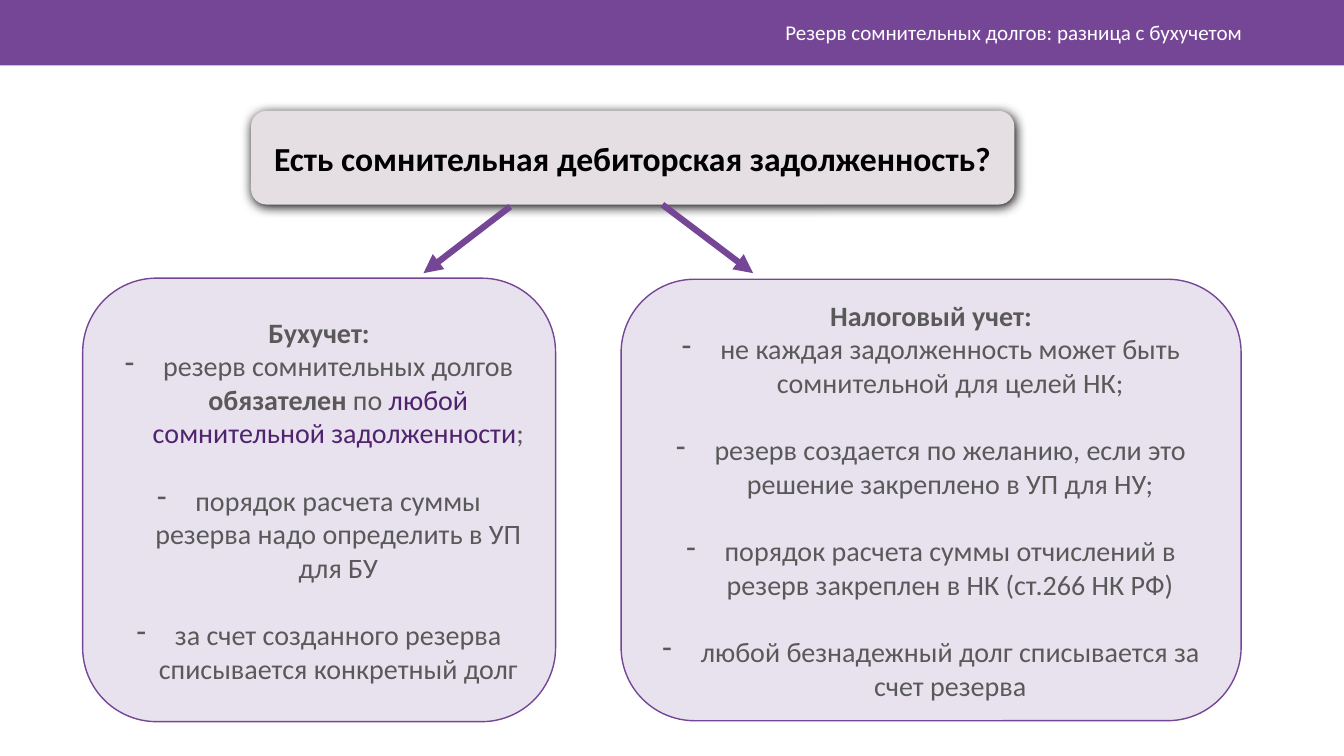
from dataclasses import dataclass

from lxml import etree
from pptx import Presentation
from pptx.dml.color import RGBColor
from pptx.enum.shapes import MSO_CONNECTOR, MSO_SHAPE
from pptx.enum.text import MSO_ANCHOR, PP_ALIGN
from pptx.oxml.ns import qn
from pptx.util import Inches, Pt

RECT, ROUNDED = MSO_SHAPE.RECTANGLE, MSO_SHAPE.ROUNDED_RECTANGLE
STRAIGHT = MSO_CONNECTOR.STRAIGHT
CENTER, RIGHT = PP_ALIGN.CENTER, PP_ALIGN.RIGHT
MIDDLE = MSO_ANCHOR.MIDDLE


@dataclass(frozen=True)
class Theme:
    font: str = "Calibri"
    purple: str = "764696"
    accent: str = "50236E"
    panel: str = "E8E2EE"
    question: str = "E5DEE3"
    body: str = "595959"
    white: str = "FFFFFF"
    black: str = "000000"
    header_size: int = 15
    question_size: int = 24
    body_size: int = 20
    item_gap: int = 24


class SlideBuilder:
    def __init__(self, slide, theme):
        self.slide = slide
        self.theme = theme

    def add_text(self, paragraph, text, size, color, bold=False):
        run = paragraph.add_run()
        run.text = text
        run.font.color.rgb = RGBColor.from_string(color)
        formats = {"name": self.theme.font, "size": Pt(size), "bold": bold}
        for attribute, value in formats.items():
            setattr(run.font, attribute, value)

    def frame(self, shape, align):
        text_frame = shape.text_frame
        formats = {"word_wrap": True, "vertical_anchor": MIDDLE}
        for attribute, value in formats.items():
            setattr(text_frame, attribute, value)
        text_frame.paragraphs[0].alignment = align
        return text_frame

    def box(self, preset, area, fill, line=None):
        shape = self.slide.shapes.add_shape(preset, *map(Inches, area))
        shape.shadow.inherit = False
        shape.fill.solid()
        shape.fill.fore_color.rgb = RGBColor.from_string(fill)
        if line:
            shape.line.color.rgb = RGBColor.from_string(line)
            shape.line.width = Pt(1)
        else:
            shape.line.fill.background()
        return shape

    def header(self, text):
        theme = self.theme
        self.box(RECT, (0, 0, 13.33, 0.65), theme.purple)
        title = self.slide.shapes.add_textbox(*map(Inches, (3.54, 0.12, 8.88, 0.4)))
        paragraph = self.frame(title, RIGHT).paragraphs[0]
        self.add_text(paragraph, text, theme.header_size, theme.white)

    def question(self, area, text):
        theme = self.theme
        shape = self.box(ROUNDED, area, theme.question)
        # Soft shadow just below the box
        effects = shape._element.spPr.find(qn("a:effectLst"))
        shadow = etree.SubElement(
            effects, qn("a:outerShdw"), blurRad=str(Pt(8.5)), dist=str(Pt(1)),
            dir="5400000", algn="t", rotWithShape="0")
        etree.SubElement(shadow, qn("a:srgbClr"), val=theme.black)
        paragraph = self.frame(shape, CENTER).paragraphs[0]
        self.add_text(paragraph, text, theme.question_size, theme.black, bold=True)

    def panel(self, area, heading, items):
        theme = self.theme
        shape = self.box(ROUNDED, area, theme.panel, theme.purple)
        text_frame = self.frame(shape, CENTER)
        self.add_text(text_frame.paragraphs[0], heading, theme.body_size, theme.body, bold=True)
        for index, item in enumerate(items):
            paragraph = text_frame.add_paragraph()
            self.dash(paragraph)
            paragraph.alignment = CENTER
            paragraph.space_before = Pt(theme.item_gap if index else 0)
            for text, color, bold in item:
                self.add_text(paragraph, text, theme.body_size, color, bold)

    def dash(self, paragraph):
        properties = paragraph._p.get_or_add_pPr()
        indent = Inches(0.38)
        properties.set("marL", str(indent))
        properties.set("indent", str(-indent))
        etree.SubElement(properties, qn("a:buFontTx"))
        etree.SubElement(properties, qn("a:buChar"), char="-")

    def arrow(self, start, end):
        connector = self.slide.shapes.add_connector(STRAIGHT, *map(Inches, start + end))
        connector.line.color.rgb = RGBColor.from_string(self.theme.purple)
        connector.line.width = Pt(4.5)
        line = connector._element.spPr.find(qn("a:ln"))
        etree.SubElement(line, qn("a:tailEnd"), type="triangle")
        etree.SubElement(connector._element.spPr, qn("a:effectLst"))


def main():
    deck = Presentation()
    deck.slide_width, deck.slide_height = Inches(13.33), Inches(7.5)
    theme = Theme()
    builder = SlideBuilder(deck.slides.add_slide(deck.slide_layouts[6]), theme)

    def plain(text):
        return [(text, theme.body, False)]

    # Header and the opening question
    builder.header("Резерв сомнительных долгов: разница с бухучетом")
    builder.question((2.49, 1.1, 7.57, 0.93), "Есть сомнительная дебиторская задолженность?")

    # Accounting rules
    builder.panel((0.82, 2.76, 4.69, 4.4), "Бухучет:", [
        [("резерв сомнительных долгов ", theme.body, False),
         ("обязателен", theme.body, True),
         (" по ", theme.body, False),
         ("любой сомнительной задолженности", theme.accent, False),
         (";", theme.body, False)],
        plain("порядок расчета суммы резерва надо определить в УП для БУ"),
        plain("за счет созданного резерва списывается конкретный долг"),
    ])

    # Tax rules
    builder.panel((6.16, 2.77, 6.15, 4.38), "Налоговый учет:", [
        plain("не каждая задолженность может быть сомнительной для целей НК;"),
        plain("резерв создается по желанию, если это решение закреплено в УП для НУ;"),
        plain("порядок расчета суммы отчислений в резерв закреплен в НК (ст.266 НК РФ)"),
        plain("любой безнадежный долг списывается за счет резерва"),
    ])

    # Arrows from the question to both panels
    builder.arrow((5.06, 2.05), (4.2, 2.71))
    builder.arrow((6.57, 2.03), (7.47, 2.71))

    deck.save("out.pptx")


if __name__ == "__main__":
    main()
